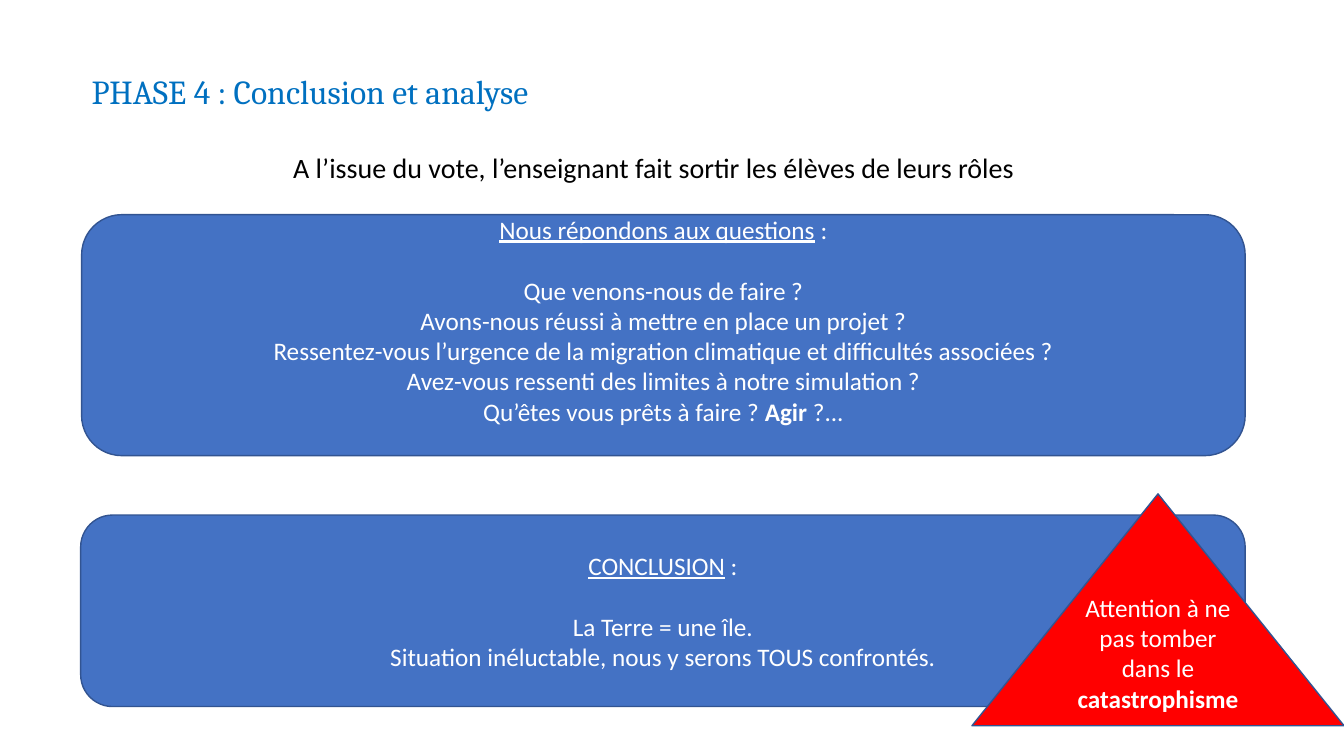
import pptx
import pptx.util
import pptx.dml.color
import pptx.enum.shapes
import pptx.enum.text

PX = 9144
WHITE = "FFFFFF"
BLUE = "4472C4"
SHAPE = pptx.enum.shapes.MSO_SHAPE
ALIGN = pptx.enum.text.PP_ALIGN
ANCHOR = pptx.enum.text.MSO_ANCHOR

ASKS = [
    [("Nous répondons aux questions", "u"), (" :", "")],
    [("Que venons-nous de faire ?", "")],
    [("Avons-nous réussi à mettre en place un projet ?", "")],
    [("Ressentez-vous l’urgence de la migration climatique et difficultés associées ?", "")],
    [("Avez-vous ressenti des limites à notre simulation ?", "")],
    [("Qu’êtes vous prêts à faire ? ", ""), ("Agir", "b"), (" ?...", "")],
]
CLOSE = [
    [("CONCLUSION", "u"), (" :", "")],
    [("La Terre = une île.", "")],
    [("Situation inéluctable, nous y serons TOUS confrontés.", "")],
]
ALERT = [[("Attention à ne pas tomber dans le ", ""), ("catastrophisme", "b")]]


def px(*sizes):
    return [pptx.util.Emu(size * PX) for size in sizes]


def color(code):
    return pptx.dml.color.RGBColor.from_string(code)


def style(para, size, face, code):
    para.font.size = pptx.util.Pt(size)
    para.font.name = face
    para.font.color.rgb = color(code)


def label(slide, box, text, size, face, code):
    frame = slide.shapes.add_textbox(*px(*box)).text_frame
    frame.word_wrap = True
    para = frame.paragraphs[0]
    para.text = text
    style(para, size, face, code)


def panel(slide, box, kind, fill, lines, foot=5, gap=0):
    shape = slide.shapes.add_shape(kind, *px(*box))
    shape.shadow.inherit = False
    shape.fill.solid()
    shape.fill.fore_color.rgb = color(fill)
    shape.line.color.rgb = color("325491")
    shape.line.width = pptx.util.Pt(1)
    frame = shape.text_frame
    frame.word_wrap = True
    frame.vertical_anchor = ANCHOR.MIDDLE
    frame.margin_bottom = px(foot)[0]
    for row, line in enumerate(lines):
        para = frame.add_paragraph() if row else frame.paragraphs[0]
        para.alignment = ALIGN.CENTER
        style(para, 18, "Calibri", WHITE)
        para.space_after = pptx.util.Pt(0 if row else gap)
        for text, mark in line:
            run = para.add_run()
            run.text = text
            if mark == "u":
                run.font.underline = True
            elif mark == "b":
                run.font.bold = True


def main():
    deck = pptx.Presentation()
    deck.slide_width, deck.slide_height = px(1333, 750)
    slide = deck.slides.add_slide(deck.slide_layouts[6])
    label(slide, (81, 65, 917, 50), "PHASE 4 : Conclusion et analyse",
          24, "Cambria", "0070C0")
    label(slide, (281, 144, 834, 77),
          "A l’issue du vote, l’enseignant fait sortir les élèves de leurs rôles",
          20, "Calibri", "000000")
    panel(slide, (81, 213, 1154, 239), SHAPE.ROUNDED_RECTANGLE, BLUE, ASKS, 35, 22)
    panel(slide, (80, 511, 1155, 190), SHAPE.ROUNDED_RECTANGLE, BLUE, CLOSE, gap=22)
    panel(slide, (964, 490, 369, 230), SHAPE.ISOSCELES_TRIANGLE, "FF0000", ALERT, 35)
    deck.save("out.pptx")


if __name__ == "__main__":
    main()
